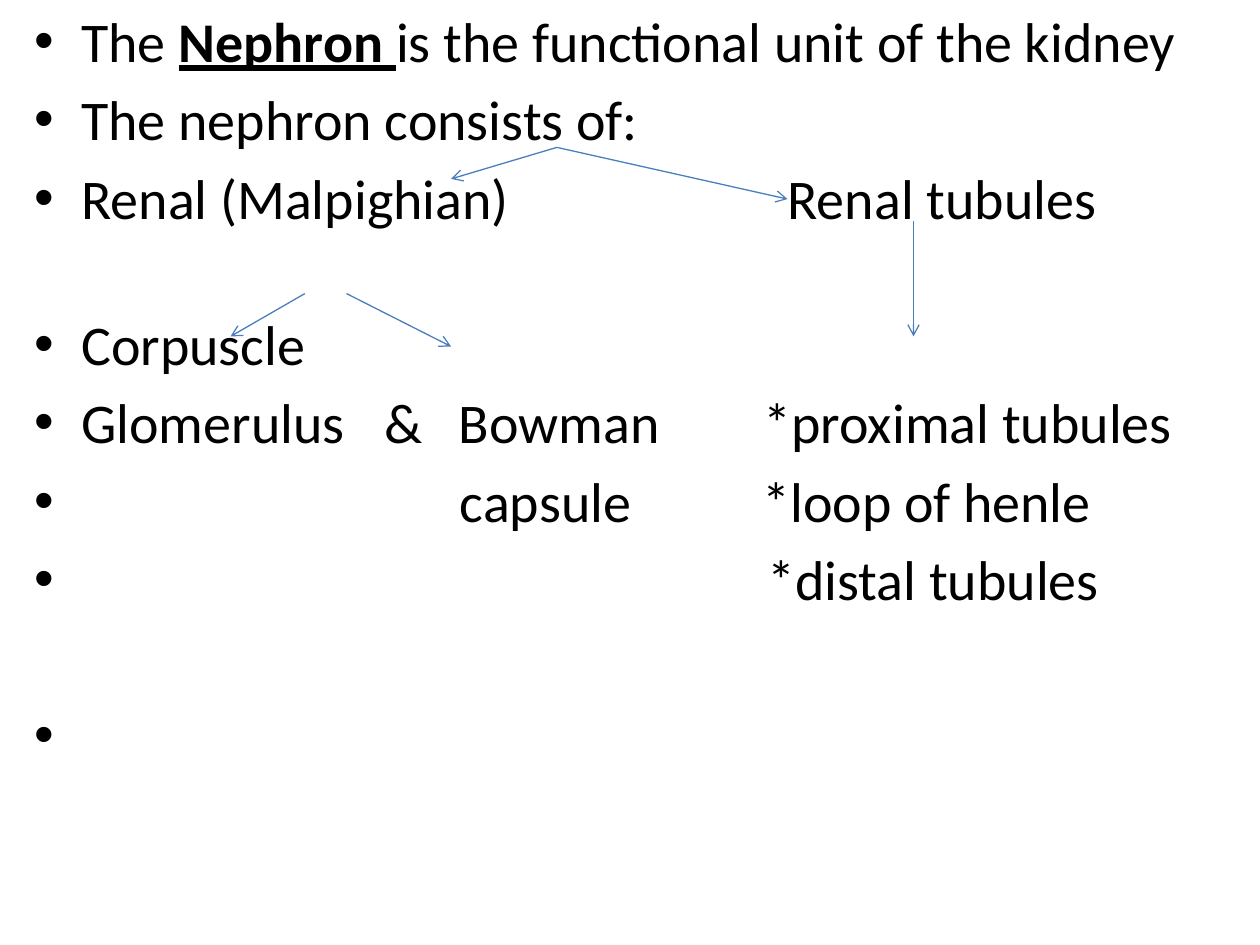
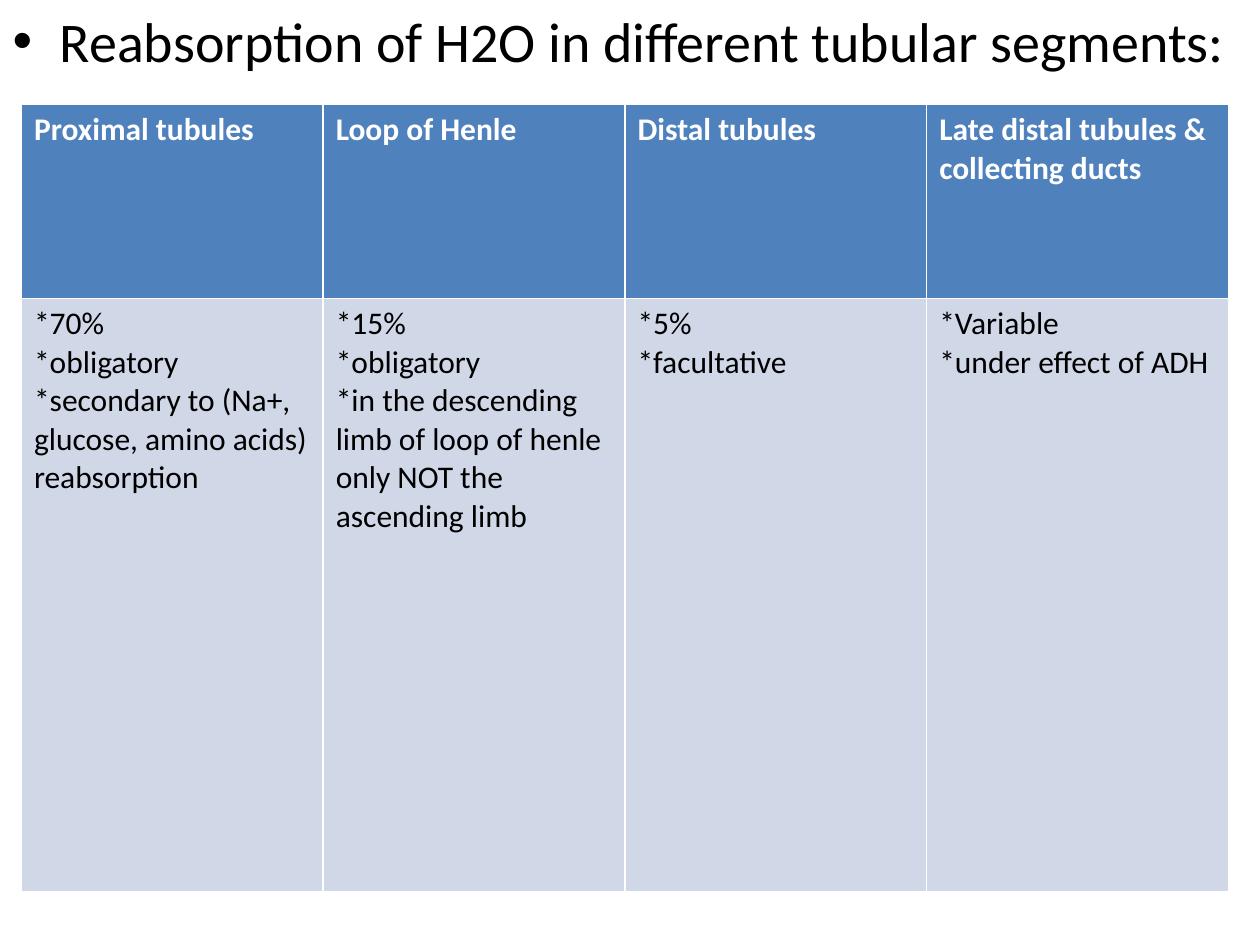
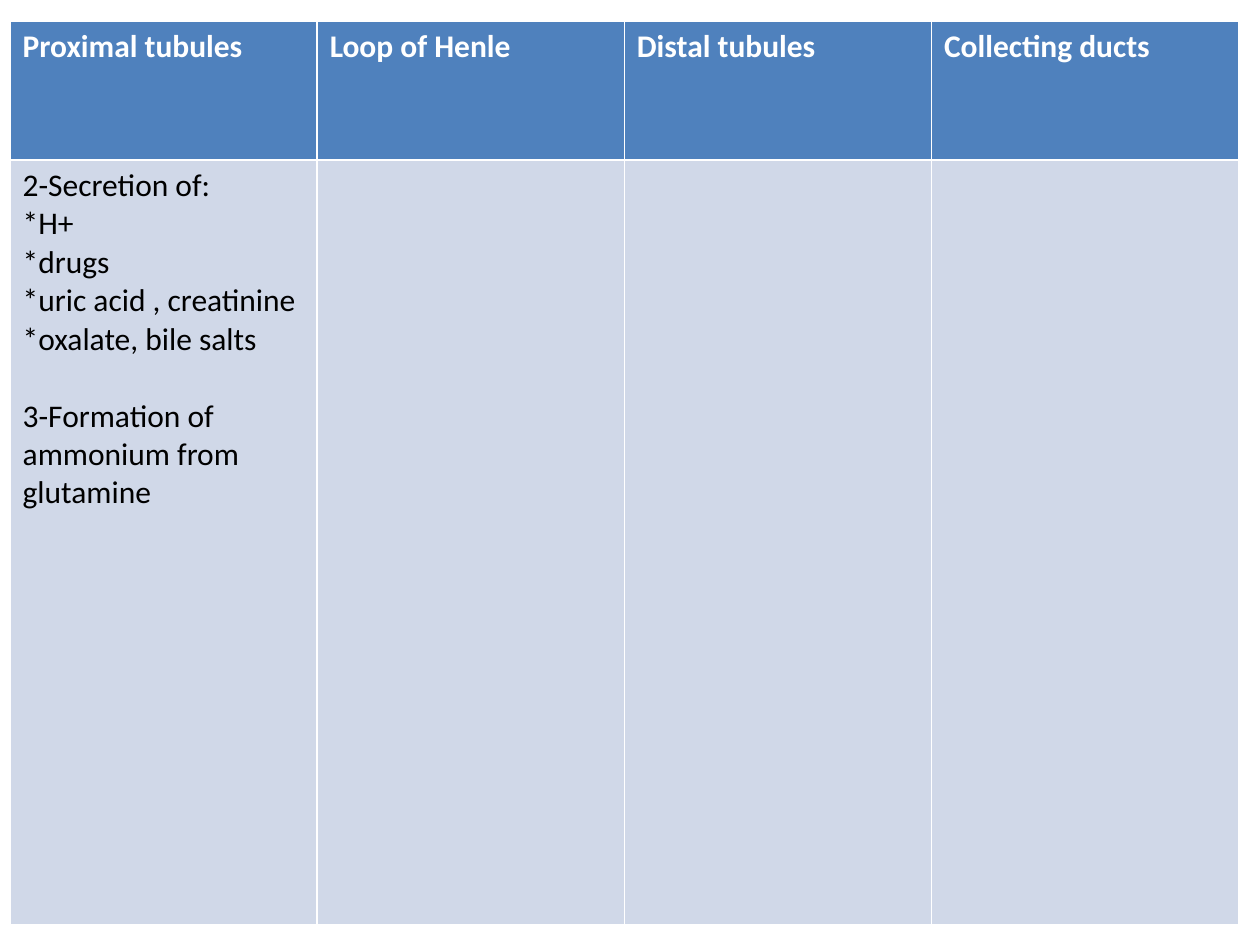
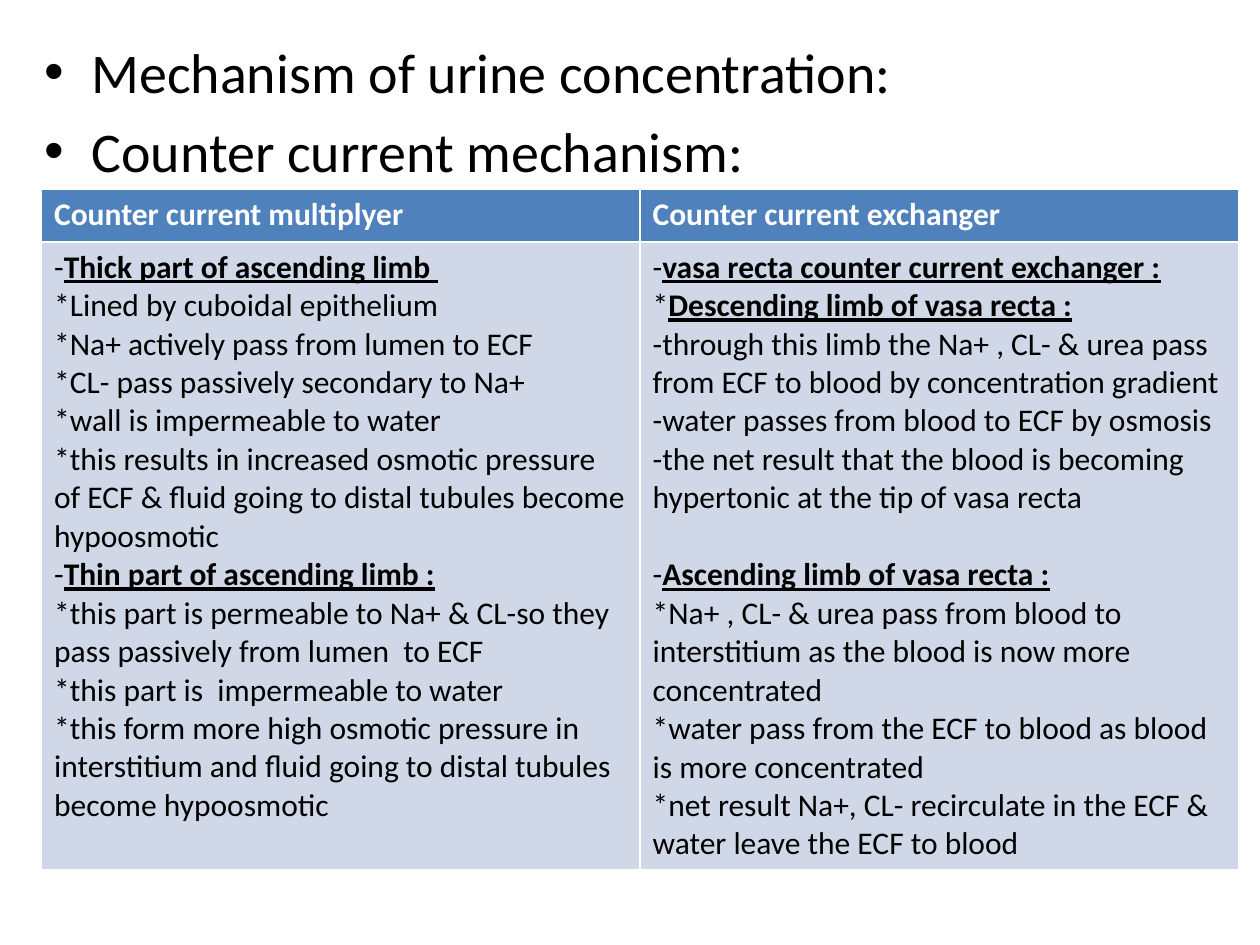
from dataclasses import dataclass

from lxml import etree
from pptx import Presentation
from pptx.dml.color import RGBColor
from pptx.enum import shapes, text
from pptx.oxml import ns
from pptx.util import Inches, Pt


@dataclass(frozen=True)
class Theme:
    font: str = "Calibri"
    black: RGBColor = RGBColor.from_string("000000")
    white: RGBColor = RGBColor.from_string("FFFFFF")
    header: RGBColor = RGBColor.from_string("4F81BD")
    body: RGBColor = RGBColor.from_string("D0D8E8")
    arrow: RGBColor = RGBColor.from_string("4B7EBC")
    bullet_size: int = 32
    table_size: int = 18
    arrow_width: float = 0.75
    bullet_gap: float = 6.4


THEME = Theme()
LAYOUT_CONTENT, LAYOUT_BLANK = 1, 6

# A line is text, or (text, space before in points); |bars| mark emphasis.
SLIDES = [
    {
        "bullets": {
            "at": (0.17, 0, 9.75, 7.33),
            "lines": [
                "The |Nephron |is the functional unit of the kidney",
                "The nephron consists of:",
                "Renal (Malpighian)\tRenal tubules",
                ("Corpuscle", 45),
                "Glomerulus\t&\tBowman\t*proximal tubules",
                "\tcapsule\t*loop of henle",
                "\t*distal tubules",
                (" ", 51),
            ],
            # line number -> tab positions
            "tabs": {2: [5.98], 4: [2.78, 3.37, 5.79], 5: [3.38, 5.78], 6: [5.82]},
        },
        "arrows": [
            ((4.42, 1.17), (3.58, 1.42)),
            ((2.42, 2.33), (1.83, 2.67)),
            ((2.75, 2.33), (3.58, 2.75)),
            ((4.42, 1.17), (6.25, 1.58)),
            ((7.25, 1.75), (7.25, 2.67)),
        ],
    },
    {
        "bullets": {
            "at": (0, 0, 9.92, 7.33),
            "lines": ["Reabsorption of H2O in different tubular segments:"],
        },
        "table": {
            "at": (0.17, 0.83, 9.58, 6.25),
            "header_height": 1.54,
            "columns": {
                "Proximal tubules": [
                    "*70%",
                    "*obligatory",
                    "*secondary to (Na+, glucose, amino acids) reabsorption",
                ],
                "Loop of Henle": [
                    "*15%",
                    "*obligatory",
                    "*in the descending limb of loop of henle only NOT the ascending limb",
                ],
                "Distal tubules": ["*5%", "*facultative"],
                "Late distal tubules & collecting ducts": [
                    "*Variable",
                    "*under effect of ADH",
                ],
            },
        },
    },
    {
        "table": {
            "at": (0.08, 0.17, 9.75, 7.17),
            "header_height": 1.1,
            "columns": {
                "Proximal tubules": [
                    "2-Secretion of:",
                    "*H+",
                    "*drugs",
                    "*uric acid , creatinine",
                    "*oxalate, bile salts",
                    ("3-Formation of ammonium from glutamine", 22),
                ],
                "Loop of Henle": [],
                "Distal tubules": [],
                "Collecting ducts": [],
            },
        },
    },
    {
        "bullets": {
            "at": (0.25, 0.25, 9.58, 7.08),
            "lines": ["Mechanism of urine concentration:", "Counter current mechanism:"],
        },
        "table": {
            "at": (0.33, 1.5, 9.5, 5.32),
            "header_height": 0.42,
            "columns": {
                "Counter current multiplyer": [
                    "-|Thick part of ascending limb |",
                    "*Lined by cuboidal epithelium",
                    "*Na+ actively pass from lumen to ECF",
                    "*CL- pass passively secondary to Na+",
                    "*wall is impermeable to water",
                    "*this results in increased osmotic pressure of ECF & fluid going to "
                    "distal tubules become hypoosmotic",
                    "-|Thin part of ascending limb :|",
                    "*this part is permeable to Na+ & CL-so they pass passively from "
                    "lumen  to ECF",
                    "*this part is  impermeable to water",
                    "*this form more high osmotic pressure in interstitium and fluid going "
                    "to distal tubules become hypoosmotic",
                ],
                "Counter current exchanger": [
                    "-|vasa recta counter current exchanger :|",
                    "*|Descending limb of vasa recta :|",
                    "-through this limb the Na+ , CL- & urea pass from ECF to blood by "
                    "concentration gradient",
                    "-water passes from blood to ECF by osmosis",
                    "-the net result that the blood is becoming hypertonic at the tip of "
                    "vasa recta",
                    ("-|Ascending limb of vasa recta :|", 22),
                    "*Na+ , CL- & urea pass from blood to interstitium as the blood is now "
                    "more concentrated",
                    "*water pass from the ECF to blood as blood is more concentrated",
                    "*net result Na+, CL- recirculate in the ECF & water leave the ECF to "
                    "blood",
                ],
            },
        },
    },
]


def apply_format(target, values):
    for name, value in values.items():
        setattr(target, name, value)


def write_lines(frame, lines, size, color, bold=False, gap=0):
    """Fill a text frame; emphasised parts become bold and underlined."""
    for number, line in enumerate(lines):
        content, space = line if isinstance(line, tuple) else (line, gap)
        paragraph = frame.paragraphs[0] if number == 0 else frame.add_paragraph()
        paragraph.space_before = Pt(space)
        for part_number, part in enumerate(content.split("|")):
            if not part:
                continue
            emphasised = part_number % 2 == 1
            run = paragraph.add_run()
            run.text = part
            run.font.color.rgb = color
            apply_format(run.font, {
                "name": THEME.font,
                "size": Pt(size),
                "bold": bold or emphasised,
                "underline": emphasised,
            })


def set_tabs(paragraph, positions):
    properties = paragraph._p.get_or_add_pPr()
    tab_list = etree.SubElement(properties, ns.qn("a:tabLst"))
    for position in positions:
        etree.SubElement(tab_list, ns.qn("a:tab"), pos=str(Inches(position)), algn="l")


def add_bullets(slide, at, lines, tabs=None):
    title = slide.shapes.title
    title.element.getparent().remove(title.element)
    body = slide.placeholders[1]
    apply_format(body, dict(zip(("left", "top", "width", "height"), map(Inches, at))))
    frame = body.text_frame
    apply_format(frame, {"word_wrap": True, "auto_size": text.MSO_AUTO_SIZE.NONE})
    write_lines(frame, lines, THEME.bullet_size, THEME.black, gap=THEME.bullet_gap)
    for number, positions in (tabs or {}).items():
        set_tabs(frame.paragraphs[number], positions)


def add_arrow(slide, start, end):
    arrow = slide.shapes.add_connector(
        shapes.MSO_CONNECTOR.STRAIGHT, *map(Inches, start + end))
    arrow.line.color.rgb = THEME.arrow
    arrow.line.width = Pt(THEME.arrow_width)
    etree.SubElement(arrow.line._get_or_add_ln(), ns.qn("a:tailEnd"), type="arrow")
    etree.SubElement(arrow.element.spPr, ns.qn("a:effectLst"))


def add_column_table(slide, at, header_height, columns):
    """Add a table of equal columns, each with a heading and one tall cell."""
    table = slide.shapes.add_table(2, len(columns), *map(Inches, at)).table
    width, height = at[2:]
    for row, row_height in zip(table.rows, (header_height, height - header_height)):
        row.height = Inches(row_height)
    for number, (heading, lines) in enumerate(columns.items()):
        table.columns[number].width = Inches(width / len(columns))
        rows = (([heading], THEME.header, THEME.white, True),
                (lines, THEME.body, THEME.black, False))
        for row_number, (content, fill, color, bold) in enumerate(rows):
            cell = table.cell(row_number, number)
            cell.fill.solid()
            cell.fill.fore_color.rgb = fill
            write_lines(cell.text_frame, content, THEME.table_size, color, bold)


def main():
    presentation = Presentation()
    apply_format(presentation, {"slide_width": Inches(10), "slide_height": Inches(7.5)})
    for content in SLIDES:
        layout = LAYOUT_CONTENT if "bullets" in content else LAYOUT_BLANK
        slide = presentation.slides.add_slide(presentation.slide_layouts[layout])
        if "bullets" in content:
            add_bullets(slide, **content["bullets"])
        for start, end in content.get("arrows", []):
            add_arrow(slide, start, end)
        if "table" in content:
            add_column_table(slide, **content["table"])
    presentation.save("out.pptx")


if __name__ == "__main__":
    main()
